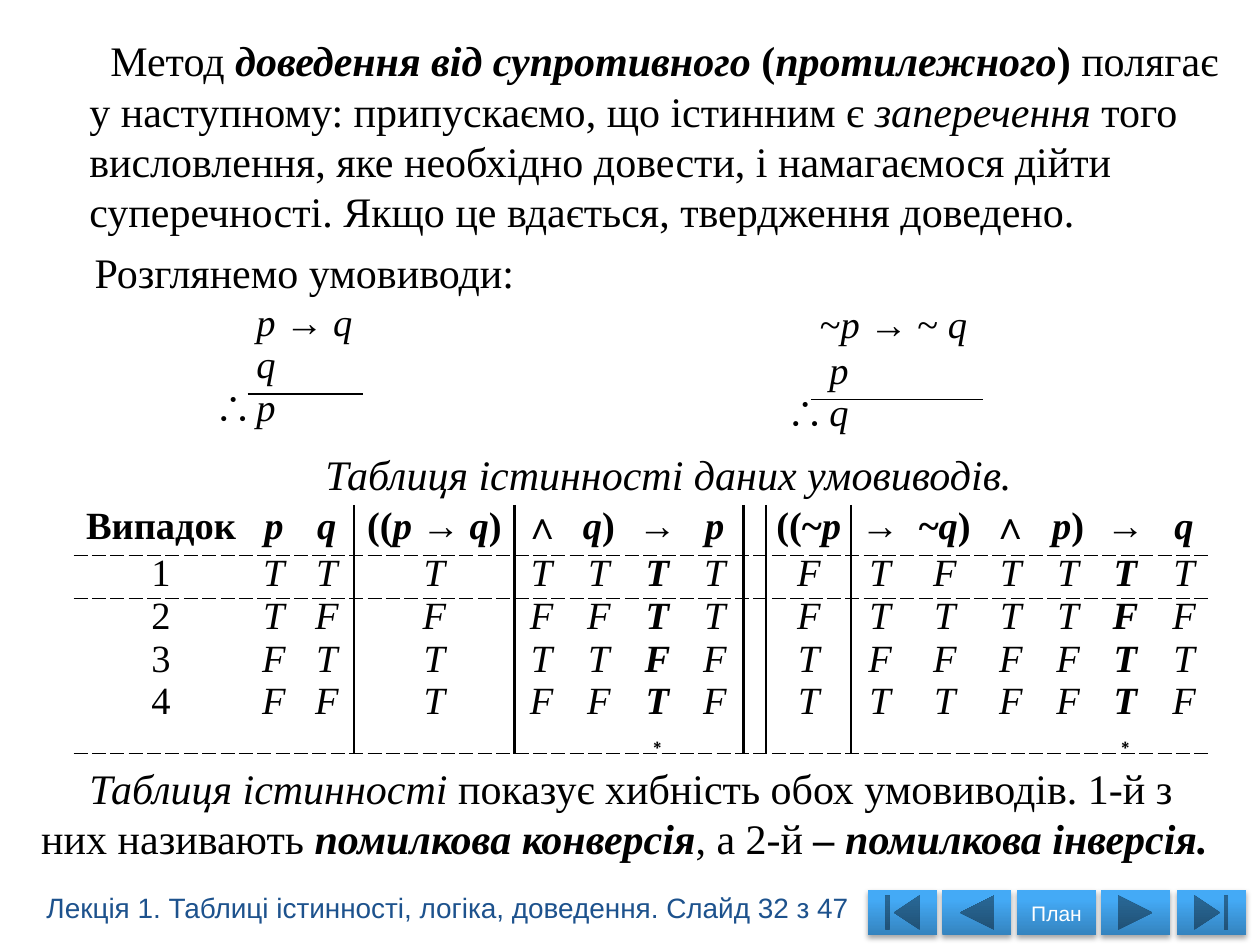
"""Build a slide on proof by contradiction with two invalid arguments and their truth table."""
from itertools import groupby

from lxml import etree
from pptx import Presentation
from pptx import util as u
from pptx.dml import color
from pptx.enum import shapes, text
from pptx.oxml import ns

Pt = u.Pt
COLORS = {"text": "000000", "footer": "1D528D", "label": "FFFFFF",
          "button_dark": "3483BE", "button_light": "44AAF6"}
SERIF, SANS = "Times New Roman", "Arial"
NO_STYLE = "{2D5ABB26-0587-4C30-8999-92F81FD0307C}"
LEFT, CENTER, RIGHT = text.PP_ALIGN.LEFT, text.PP_ALIGN.CENTER, text.PP_ALIGN.RIGHT


def write(paragraph, runs, size, align=LEFT, font=SERIF, ink="text"):
    """Write (words, style) runs, where style holds b for bold and i for italic."""
    paragraph.alignment = align
    paragraph.font.size, paragraph.font.name = Pt(size), font
    paragraph.font.color.rgb = color.RGBColor.from_string(COLORS[ink])
    uniform = len({style for _, style in runs}) == 1
    for words, style in runs:
        run = paragraph.add_run()
        run.text = words
        target = paragraph.font if uniform else run.font
        target.bold, target.italic = "b" in style, "i" in style


def fill_cell(cell, formula, align, spacing, borders, bold=False, size=22):
    """Write a formula with italic variables and draw borders given as side: (width, dash)."""
    cell.margin_left = cell.margin_right = Pt(5)
    cell.margin_top = cell.margin_bottom = 0
    paragraph = cell.text_frame.paragraphs[0]
    runs = [("".join(part), ("b" if bold else "") + ("i" if variable else ""))
            for variable, part in groupby(formula, lambda sign: sign in "pqТF")]
    write(paragraph, runs, size, align)
    paragraph.line_spacing = spacing
    if not formula:
        paragraph._p.get_or_add_endParaRPr().set("sz", "400")
    properties = cell._tc.get_or_add_tcPr()
    for side in "LRTB":
        if side in borders:
            width, dash = borders[side]
            line = etree.SubElement(properties, ns.qn(f"a:ln{side}"), w=str(Pt(width)))
            solid = etree.SubElement(line, ns.qn("a:solidFill"))
            etree.SubElement(solid, ns.qn("a:srgbClr"), val=COLORS["text"])
            etree.SubElement(line, ns.qn("a:prstDash"), val=dash)
    cell.fill.background()


prs = Presentation()
prs.slide_width, prs.slide_height = Pt(720), Pt(540)
slide = prs.slides.add_slide(prs.slide_layouts[6])

passages = [
    (16.5, 175, [
        (27.5, 12, LEFT, [
            ("Метод ", ""), ("доведення від супротивного ", "bi"), ("(", "b"),
            ("протилежного", "bi"), (") ", "b"),
            ("полягає у наступному: припускаємо, що істинним є ", ""),
            ("заперечення", "i"),
            (" того висловлення, яке необхідно довести, і намагаємося дійти "
             "суперечності. Якщо це вдається, твердження доведено.", "")]),
        (27.5, 3, LEFT, [("Розглянемо умовиводи:", "")])]),
    (253, 36, [
        (27.5, 0, CENTER, [("Таблиця істинності даних умовиводів.", "i")])]),
    (432, 65, [
        (27.5, 0, LEFT, [("Таблиця істинності ", "i"),
                         ("показує хибність обох умовиводів. 1-й з", "")]),
        (0, 0, LEFT, [("них називають ", ""), ("помилкова конверсія", "bi"),
                      (", а 2-й ", ""), ("– помилкова інверсія.", "bi")])]),
]
for top, height, paragraphs in passages:
    frame = slide.shapes.add_textbox(Pt(16.5), Pt(top), Pt(703.5), Pt(height)).text_frame
    frame.word_wrap = True
    for index, (margin, indent, align, runs) in enumerate(paragraphs):
        paragraph = frame.paragraphs[0] if index == 0 else frame.add_paragraph()
        properties = paragraph._p.get_or_add_pPr()
        properties.set("marL", str(Pt(margin)))
        properties.set("indent", str(Pt(indent)))
        paragraph.line_spacing = Pt(28.7)
        if index and margin:
            paragraph.space_before = Pt(6)
        write(paragraph, runs, 24, align)

T_CASES = ["1ТТТТТТТ FТFТТТТ", "2ТFFFFТТ FТТТТFF", "3FТТТТFF ТFFFFТТ", "4FFТFFТF ТТТFFТF"]
arguments = [
    (117.5, 176.5, [24, 66], [24.3, 24.3, 24.3], RIGHT, ["p → q", "q", "p"]),
    (444.5, 178, [19, 98], [26, 24.3, 24.3], CENTER, ["~p → ~ q", " p", " q"]),
]
truth_widths = [100, 29, 31.5, 91.5, 31, 34.5, 32.5, 33, 13, 48.5, 33, 41, 34.5, 31, 34.5, 32.5]
truth_heights = [29, 24.5, 24.5, 24.5, 24.5, 15]
header = ["Випадок", "p", "q", "((p → q)", "∧", "q)", "→", "p", "",
          "((~p", "→", "~q)", "∧", "p)", "→", "q"]
verdicts = (6, 14)
truth_rows = [header] + [[value.strip() for value in case] for case in T_CASES]
truth_rows.append(["∗" if column in verdicts else "" for column in range(len(header))])

grids = [(left, top, widths, heights) for left, top, widths, heights, _, _ in arguments]
grids.append((42, 288.5, truth_widths, truth_heights))
tables = []
for left, top, widths, heights in grids:
    table = slide.shapes.add_table(len(heights), len(widths), Pt(left), Pt(top),
                                   Pt(sum(widths)), Pt(sum(heights))).table
    table.first_row = table.horz_banding = False
    table._tbl.tblPr.find(ns.qn("a:tableStyleId")).text = NO_STYLE
    for column, width in zip(table.columns, widths):
        column.width = Pt(width)
    for row, height in zip(table.rows, heights):
        row.height = Pt(height)
    tables.append(table)

for table, (*_, sign_align, formulas) in zip(tables, arguments):
    for row, formula in enumerate(formulas):
        rule = {1: {"B": (1, "solid")}, 2: {"T": (1, "solid")}}.get(row, {})
        fill_cell(table.cell(row, 0), "∴" if row == 2 else "", sign_align, 0.8, {})
        fill_cell(table.cell(row, 1), formula, LEFT, 0.8, rule)

last = len(truth_rows) - 1
for row, values in enumerate(truth_rows):
    for column, value in enumerate(values):
        borders = {}
        if column in (3, 8, 9):
            borders["L"] = (1.5, "solid")
        if column in (2, 7, 8):
            borders["R"] = (1.5, "solid")
        if row == 1:
            borders["T"] = (1, "dash")
        if row in (0, last):
            borders["B"] = (1, "dash")
        cell = tables[-1].cell(row, column)
        spacing = {0: 1.0, last: 0.4}.get(row, 0.9)
        fill_cell(cell, value, CENTER, spacing, borders,
                  row == 0 or column in verdicts, 14 if row == last else 22)
        if row == last:
            cell.vertical_anchor = text.MSO_ANCHOR.BOTTOM

kinds = shapes.MSO_SHAPE
buttons = [
    (496, 39.5, kinds.ACTION_BUTTON_BEGINNING, ""),
    (538.5, 39.5, kinds.ACTION_BUTTON_BACK_OR_PREVIOUS, ""),
    (581, 45.5, kinds.ACTION_BUTTON_CUSTOM, "План"),
    (629, 39.5, kinds.ACTION_BUTTON_FORWARD_OR_NEXT, ""),
    (672.5, 39.5, kinds.ACTION_BUTTON_END, ""),
]
for left, width, kind, label in buttons:
    button = slide.shapes.add_shape(kind, Pt(left), Pt(508.5), Pt(width), Pt(26))
    button.line.fill.background()
    button.fill.gradient()
    button.fill.gradient_angle = 90
    stops = zip(button.fill.gradient_stops, (0, 0.8), ("button_dark", "button_light"))
    for stop, position, tone in stops:
        stop.position = position
        stop.color.rgb = color.RGBColor.from_string(COLORS[tone])
    button.shadow.inherit = False
    effects = button._element.spPr.find(ns.qn("a:effectLst"))
    shadow = etree.SubElement(effects, ns.qn("a:outerShdw"), blurRad=str(Pt(3.1)),
                              dist=str(Pt(1.8)), dir="5400000", rotWithShape="0")
    shade = etree.SubElement(shadow, ns.qn("a:srgbClr"), val=COLORS["text"])
    etree.SubElement(shade, ns.qn("a:alpha"), val="35000")
    if label:
        button.text_frame.word_wrap = False
        write(button.text_frame.paragraphs[0], [(label, "")], 12, CENTER, SANS, "label")

footer = slide.shapes.add_textbox(Pt(19.5), Pt(505.5), Pt(479.5), Pt(26.5)).text_frame
footer.word_wrap = False
write(footer.paragraphs[0],
      [("Лекція 1. Таблиці істинності, логіка, доведення. Слайд 32 з 47", "")],
      16, LEFT, SANS, "footer")

prs.save("out.pptx")
